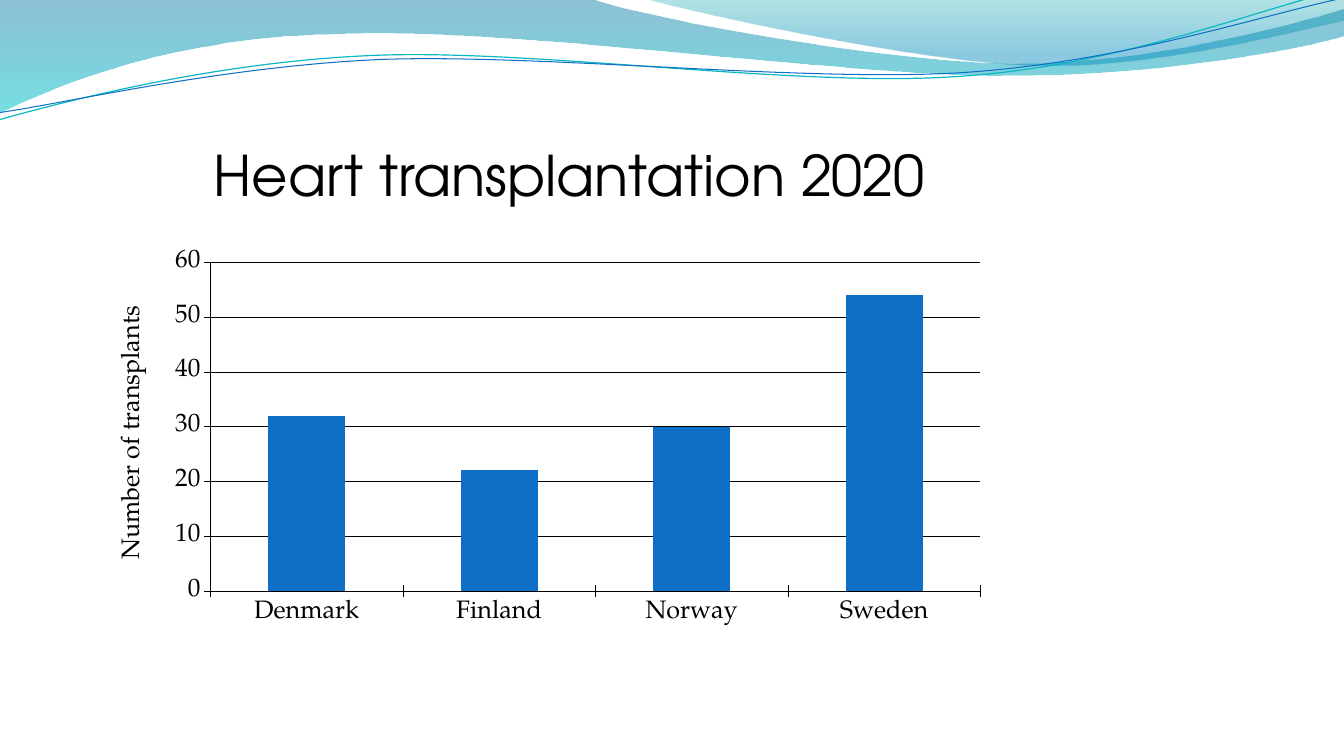
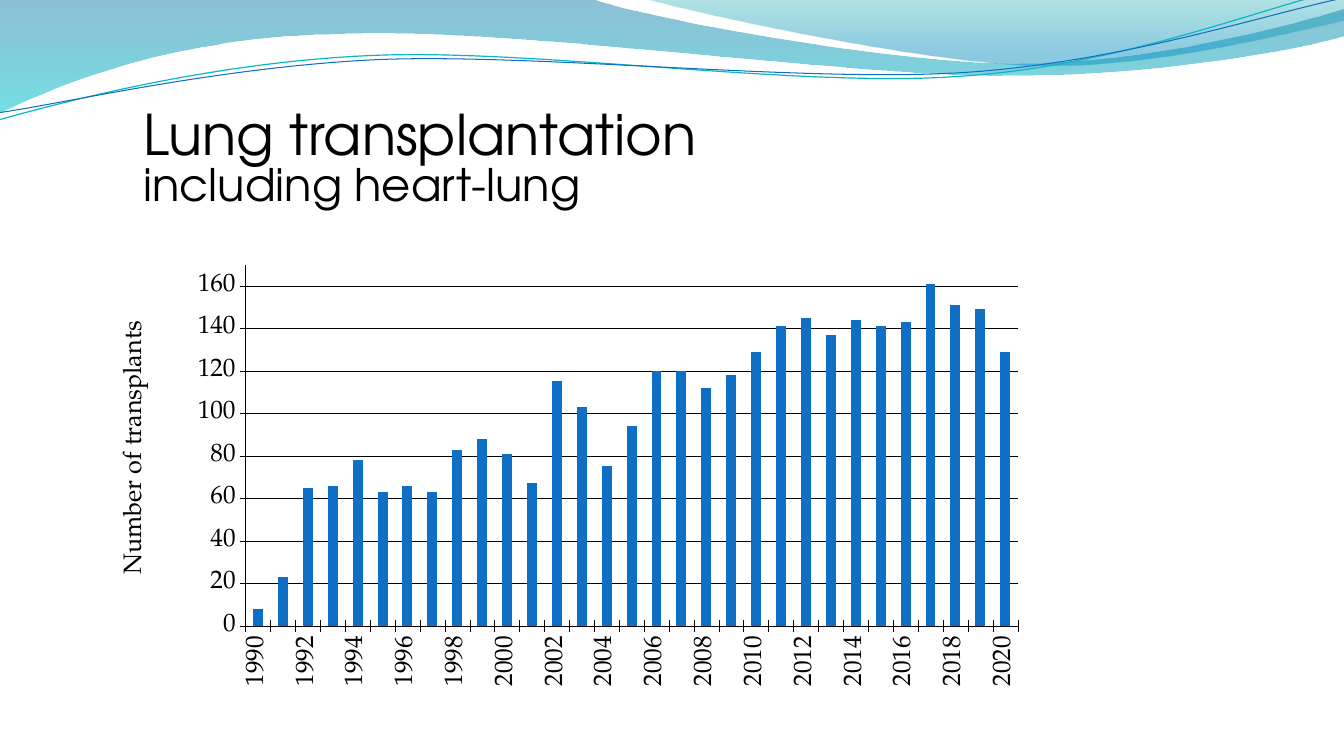
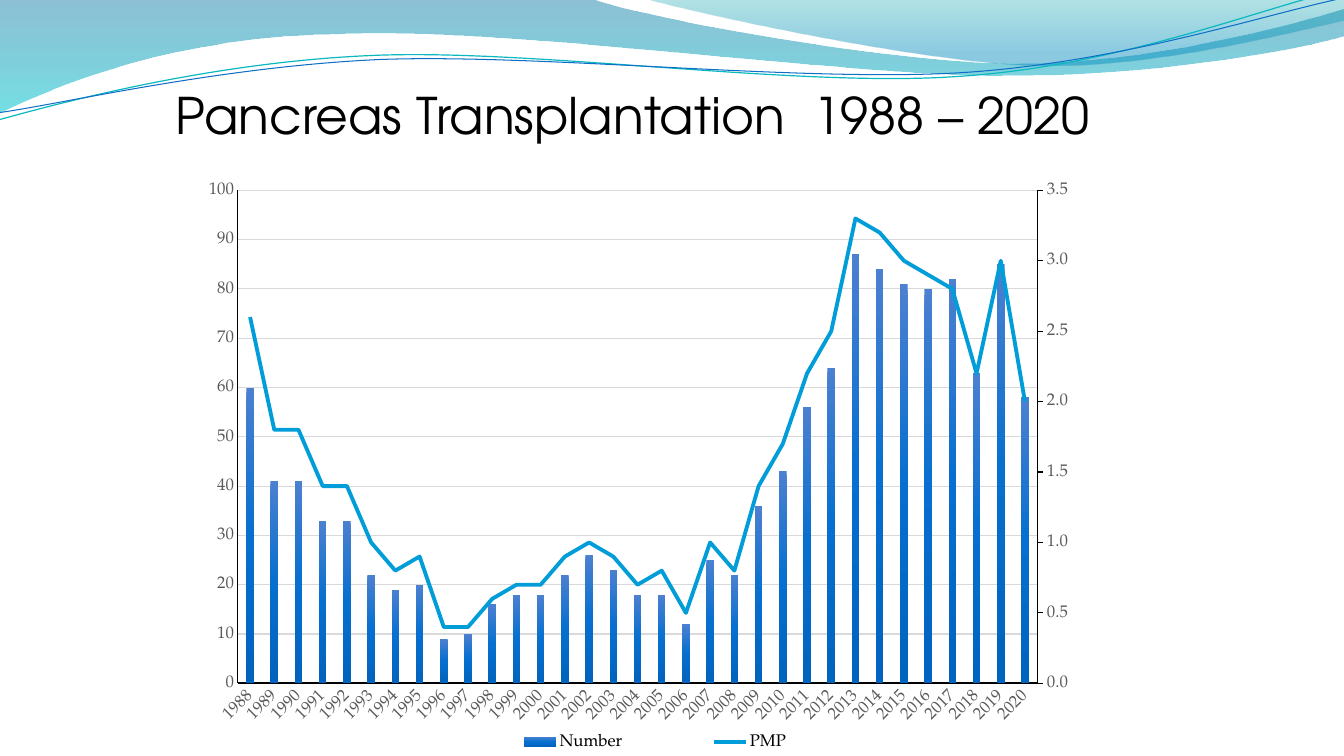
from copy import deepcopy

from lxml.etree import SubElement
from pptx import Presentation
from pptx.chart.axis import CategoryAxis, ValueAxis
from pptx.chart.data import CategoryChartData
from pptx.dml.color import RGBColor
from pptx.enum.chart import XL_CHART_TYPE, XL_LEGEND_POSITION, XL_MARKER_STYLE, XL_TICK_MARK
from pptx.enum.text import MSO_ANCHOR
from pptx.oxml import parse_xml
from pptx.oxml.ns import nsdecls, qn
from pptx.util import Cm, Pt

BLACK = RGBColor(0x00, 0x00, 0x00)
GREY = RGBColor(0x59, 0x59, 0x59)
PALE_GREY = RGBColor(0xD9, 0xD9, 0xD9)
BLUE = RGBColor(0x0F, 0x6F, 0xC6)
SKY = RGBColor(0x00, 0x9D, 0xD9)
TEAL = RGBColor(0x0A, 0xB8, 0xBF)

# Gradient stops: position %, colour, opacity %
WAVE_FILL = [(0, RGBColor(0x00, 0x74, 0xA1), 45), (100, RGBColor(0x00, 0xC6, 0xCF), 55)]
CREST_FILL = [(0, RGBColor(0x00, 0xA1, 0xA9), 30), (80, RGBColor(0x00, 0x8B, 0xBF), 45)]
BAR_FILL = [(0, RGBColor(0x4C, 0x80, 0xD0), 100), (50, RGBColor(0x06, 0x6F, 0xCF), 100),
            (100, RGBColor(0x00, 0x63, 0xBD), 100)]

# Outlines in cm: a pair is a straight line, six numbers are a Bezier curve
WAVE = [(0, 0), (14.91, -0.03),
        (16.1, 0.43, 22.45, 1.6, 25.68, 1.6), (28.88, 1.6, 32.44, 0.66, 33.86, 0.23),
        (33.88, 0.91),
        (33.3, 1.12, 29.44, 1.93, 25.25, 1.91), (21.06, 1.91, 12.93, 0.71, 8.71, 0.86),
        (4.37, 0.91, 1.55, 2.11, -0.05, 2.87)]
CREST = [(16.21, -0.03), (17.25, 0.28, 23.09, 1.57, 26.04, 1.65),
         (28.96, 1.75, 32.56, 0.81, 33.86, 0.53), (33.86, 0)]
TEAL_STRAND = [(-0.03, 3.02), (1.6, 2.57, 5.33, 1.57, 9.37, 1.4),
               (13.39, 1.22, 20.04, 2.21, 24.1, 1.93), (28.19, 1.68, 31.78, 0.2, 33.78, -0.25)]
BLUE_STRAND = [(-0.03, 2.84), (1.57, 2.62, 5.54, 1.68, 9.58, 1.5),
               (13.64, 1.35, 20.22, 2.08, 24.26, 1.83), (28.3, 1.57, 31.88, 0.36, 33.86, -0.05)]


def bend(sp, segments):
    """Turn the straight segments of a freeform into its Bezier curves."""
    lines = list(sp.element.iter(qn("a:lnTo")))
    for line, seg in zip(lines, segments[1:]):
        if len(seg) == 2:
            continue
        line.clear()
        line.tag = qn("a:cubicBezTo")
        for x, y in zip(seg[::2], seg[1::2]):
            SubElement(line, qn("a:pt"), x=str(Cm(x) - sp.left), y=str(Cm(y) - sp.top))


def set_gradient(fill, owner, stops):
    """Fill from top to bottom with the given stops."""
    fill.gradient()
    fill.gradient_angle = 270
    stop_list = owner.find(".//" + qn("a:gsLst"))
    stop_list.clear()
    for pos, color, opacity in stops:
        gs = SubElement(stop_list, qn("a:gs"), pos=str(pos * 1000))
        clr = SubElement(gs, qn("a:srgbClr"), val=str(color))
        if opacity < 100:
            SubElement(clr, qn("a:alpha"), val=str(opacity * 1000))


def set_layout(owner, index, percents, inner=False):
    """Place a chart part by x, y, w, h in percent of the chart area."""
    for old in owner.findall(qn("c:layout")):
        owner.remove(old)
    layout = parse_xml(f"<c:layout {nsdecls('c')}><c:manualLayout/></c:layout>")
    manual = layout[0]
    if inner:
        SubElement(manual, qn("c:layoutTarget"), val="inner")
    for edge in "xy":
        SubElement(manual, qn(f"c:{edge}Mode"), val="edge")
    for name, percent in zip("xywh", percents):
        SubElement(manual, qn(f"c:{name}"), val=f"{percent / 100:.4f}")
    owner.insert(index, layout)


def set_line(line, color, width):
    line.color.rgb = color
    line.width = Pt(width)


def set_font(font, size, color=BLACK, name="TeX Gyre Pagella"):
    font.name, font.size, font.color.rgb = name, Pt(size), color


class Deck:
    title_font = "TeX Gyre Adventor"

    def __init__(self):
        self.prs = Presentation()
        self.prs.slide_width, self.prs.slide_height = Cm(33.87), Cm(19.05)
        self.layout = self.prs.slide_layouts[6]
        for ph in list(self.layout.placeholders):
            ph.element.getparent().remove(ph.element)
        self.s = None

    def slide(self):
        first = self.s is None
        self.s = self.prs.slides.add_slide(self.layout)
        if first:
            self.waves()

    def waves(self):
        """Draw the header band once, on the shared layout."""
        self.freeform(WAVE, stops=WAVE_FILL)
        self.freeform(CREST, stops=CREST_FILL)
        self.freeform(TEAL_STRAND, line=(TEAL, 0.85))
        self.freeform(BLUE_STRAND, line=(BLUE, 0.75))
        for sp in list(self.s.shapes):
            self.layout.shapes.element.append(sp.element)

    def freeform(self, segments, stops=None, line=None):
        start, *rest = [(Cm(seg[-2]), Cm(seg[-1])) for seg in segments]
        builder = self.s.shapes.build_freeform(*start)
        builder.add_line_segments(rest, close=stops is not None)
        sp = builder.convert_to_shape()
        bend(sp, segments)
        sp.shadow.inherit = False
        if stops:
            set_gradient(sp.fill, sp.element, stops)
            sp.line.fill.background()
        else:
            sp.fill.background()
            set_line(sp.line, *line)

    def title(self, box, *lines, anchor=MSO_ANCHOR.TOP):
        """Each line is a (text, size) pair."""
        tf = self.s.shapes.add_textbox(*map(Cm, box)).text_frame
        tf.word_wrap = True
        tf.vertical_anchor = anchor
        p = tf.paragraphs[0]
        p.line_spacing = 0.8
        for i, (text, size) in enumerate(lines):
            if i:
                p.add_line_break()
            r = p.add_run()
            r.text = text
            set_font(r.font, size, name=self.title_font)

    def chart(self, kind, box, cats, series, plot, size):
        data = CategoryChartData()
        data.categories = cats
        for name, values in series:
            data.add_series(name, values)
        chart = self.s.shapes.add_chart(kind, *map(Cm, box), data).chart
        chart.has_title = chart.has_legend = False
        set_font(chart.font, size)
        chart.plots[0].vary_by_categories = False
        area = chart.element.find(".//" + qn("c:plotArea"))
        set_layout(area, 0, plot, inner=True)
        return chart, area

    def axis(self, axis, size, color, line, tick, scale=None):
        set_font(axis.tick_labels.font, size, color)
        set_line(axis.format.line, BLACK, line)
        axis.major_tick_mark, axis.minor_tick_mark = tick, XL_TICK_MARK.NONE
        if scale:
            axis.minimum_scale, axis.maximum_scale, axis.major_unit = scale

    def turn_labels(self, area, degrees):
        body = area.find(f"{qn('c:catAx')}/{qn('c:txPr')}/{qn('a:bodyPr')}")
        body.set("rot", str(degrees * 60000))
        body.set("vert", "horz")

    def column_chart(self, box, cats, values, plot, scale, title_at, label_turn=0):
        chart, area = self.chart(XL_CHART_TYPE.COLUMN_STACKED, box, cats,
                                 [("Series 1", values)], plot, 18)
        bars = chart.plots[0]
        bars.gap_width, bars.overlap = 150, 100
        fill = bars.series[0].format.fill
        fill.solid()
        fill.fore_color.rgb = BLUE
        # Axes
        value_axis = chart.value_axis
        self.axis(chart.category_axis, 18, BLACK, 0.25, XL_TICK_MARK.CROSS)
        self.axis(value_axis, 18, BLACK, 0.25, XL_TICK_MARK.CROSS, scale)
        set_line(value_axis.major_gridlines.format.line, BLACK, 0.25)
        if label_turn:
            self.turn_labels(area, label_turn)
        # Axis title
        tf = value_axis.axis_title.text_frame
        tf.text = "Number of transplants"
        set_font(tf.paragraphs[0].font, 18)
        tf.paragraphs[0].font.bold = False
        title = value_axis.axis_title.element
        body = title.find(".//" + qn("a:bodyPr"))
        body.set("rot", "-5400000")
        body.set("vert", "horz")
        set_layout(title, 1, title_at)

    def combined_chart(self, box, cats, series, plot, scale, right_scale, legend_at):
        """Columns for the first series, a line on a right axis for the second."""
        chart, area = self.chart(XL_CHART_TYPE.COLUMN_CLUSTERED, box, cats, series, plot, 10)
        chart.plots[0].gap_width = 219
        self.axis(chart.category_axis, 12, GREY, 1.25, XL_TICK_MARK.NONE)
        self.axis(chart.value_axis, 12, GREY, 0.75, XL_TICK_MARK.NONE, scale)
        set_line(chart.value_axis.major_gridlines.format.line, PALE_GREY, 0.75)
        self.turn_labels(area, -45)

        # Right axis and its hidden category axis
        cat_ax, val_ax = area.find(qn("c:catAx")), area.find(qn("c:valAx"))
        right_cat, right_val = deepcopy(cat_ax), deepcopy(val_ax)
        for ax, own, other in ((right_cat, "101", "102"), (right_val, "102", "101")):
            ax.find(qn("c:axId")).set("val", own)
            ax.find(qn("c:crossAx")).set("val", other)
        right_val.find(qn("c:axPos")).set("val", "r")
        right_val.find(qn("c:crosses")).set("val", "max")
        val_ax.addnext(right_val)
        right_val.addnext(right_cat)
        CategoryAxis(right_cat).visible = False
        right_axis = ValueAxis(right_val)
        right_axis.has_major_gridlines = False
        self.axis(right_axis, 12, GREY, 0.75, XL_TICK_MARK.OUTSIDE, right_scale)
        right_axis.tick_labels.number_format = "0.0"
        right_axis.tick_labels.number_format_is_linked = False

        # Line plot
        bar_chart = area.find(qn("c:barChart"))
        bar_ser, line_ser = bar_chart.findall(qn("c:ser"))
        for flag in line_ser.findall(qn("c:invertIfNegative")):
            line_ser.remove(flag)
        line_chart = parse_xml(
            f'<c:lineChart {nsdecls("c")}><c:grouping val="standard"/><c:varyColors val="0"/>'
            '<c:marker val="1"/><c:axId val="101"/><c:axId val="102"/></c:lineChart>')
        line_chart.insert(2, line_ser)
        bar_chart.addnext(line_chart)
        bars, lines = chart.plots
        set_gradient(bars.series[0].format.fill, bar_ser, BAR_FILL)
        curve = lines.series[0]
        curve.smooth = False
        curve.marker.style = XL_MARKER_STYLE.NONE
        set_line(curve.format.line, SKY, 2.75)

        # Legend
        chart.has_legend = True
        chart.legend.position = XL_LEGEND_POSITION.BOTTOM
        chart.legend.include_in_layout = False
        set_font(chart.legend.font, 12)
        set_layout(chart.element.find(".//" + qn("c:legend")), 1, legend_at)


def years(first, last):
    return [str(year) for year in range(first, last + 1)]


def main():
    deck = Deck()

    # Heart
    deck.slide()
    deck.title((5.13, 3.75, 20.12, 1.96), ("Heart transplantation 2020", 40))
    deck.column_chart((2.41, 5.69, 23.7, 11), ["Denmark", "Finland", "Norway", "Sweden"],
                      [32, 22, 30, 54], plot=(12.2, 8.3, 81.9, 75.4),
                      scale=(0, 60, 10), title_at=(2, 17.3))

    # Lung
    deck.slide()
    deck.title((3.37, 2.72, 25.55, 3.18), ("Lung transplantation", 40),
               ("including heart-lung", 32))
    lungs = [8, 23, 65, 66, 78, 63, 66, 63, 83, 88, 81, 67, 115, 103, 75, 94, 120, 120, 112,
             118, 129, 141, 145, 137, 144, 141, 143, 161, 151, 149, 129]
    deck.column_chart((2.31, 5.66, 27.41, 12.17), years(1990, 2020), lungs,
                      plot=(14.15, 8.3, 71, 74.8), scale=(0, 170, 20),
                      title_at=(2.2, 19), label_turn=-90)

    # Pancreas
    deck.slide()
    deck.title((4.17, 1.32, 25.1, 2.44), ("Pancreas Transplantation  1988 – 2020", 36),
               anchor=MSO_ANCHOR.BOTTOM)
    number = [60, 41, 41, 33, 33, 22, 19, 20, 9, 10, 16, 18, 18, 22, 26, 23, 18, 18, 12, 25, 22,
              36, 43, 56, 64, 87, 84, 81, 80, 82, 63, 85, 58]
    pmp = [2.6, 1.8, 1.8, 1.4, 1.4, 1, 0.8, 0.9, 0.4, 0.4, 0.6, 0.7, 0.7, 0.9, 1, 0.9, 0.7, 0.8,
           0.5, 1, 0.8, 1.4, 1.7, 2.2, 2.5, 3.3, 3.2, 3, 2.9, 2.8, 2.2, 3, 2]
    deck.combined_chart((4.8, 4.27, 22.58, 15.06), years(1988, 2020),
                        [("Number", number), ("PMP", pmp)],
                        plot=(5.3, 3.5, 89.2, 82.5), scale=(0, 100, 10),
                        right_scale=(0, 3.5, 0.5), legend_at=(27.6, 93.3, 48.5, 5))

    deck.prs.save("out.pptx")


if __name__ == "__main__":
    main()
